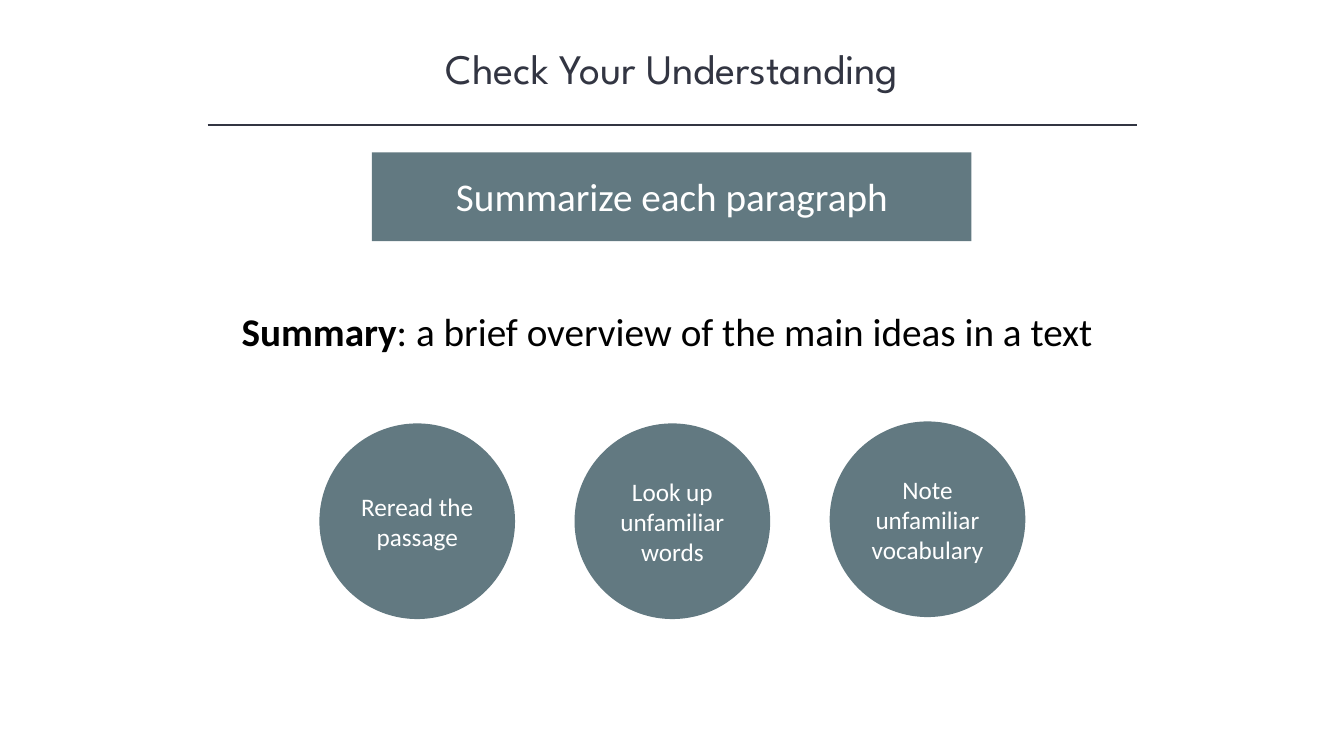
from lxml.etree import SubElement
from pptx import Presentation
from pptx.dml.color import RGBColor
from pptx.enum.shapes import MSO_CONNECTOR, MSO_SHAPE
from pptx.enum.text import MSO_ANCHOR, MSO_AUTO_SIZE, PP_ALIGN
from pptx.oxml.ns import qn
from pptx.util import Cm, Pt

INK = RGBColor(0x32, 0x35, 0x42)
SLATE = RGBColor(0x62, 0x79, 0x81)
WHITE = RGBColor(0xFF, 0xFF, 0xFF)
BLACK = RGBColor(0x00, 0x00, 0x00)

deck = Presentation()
deck.slide_width, deck.slide_height = Cm(33.87), Cm(19.05)
page = deck.slides.add_slide(deck.slide_layouts[6])


def write(box, spans, color, size, font="Calibri", align=PP_ALIGN.CENTER):
    """Fill the first paragraph with (text, bold) spans."""
    para = box.text_frame.paragraphs[0]
    para.alignment = align
    for text, bold in spans:
        span = para.add_run()
        span.text = text
        span.font.color.rgb = color
        for name, value in {"name": font, "size": Pt(size), "bold": bold}.items():
            setattr(span.font, name, value)


def add_slate_shape(kind, left, top, width, height):
    shape = page.shapes.add_shape(kind, Cm(left), Cm(top), Cm(width), Cm(height))
    shape.shadow.inherit = False
    shape.fill.solid()
    shape.fill.fore_color.rgb = SLATE
    shape.line.fill.background()
    return shape


# Title and the rule below it
title = page.shapes.add_textbox(Cm(4.24), Cm(0.94), Cm(25.4), Cm(1.55))
title.text_frame.word_wrap = True
title.text_frame.auto_size = MSO_AUTO_SIZE.SHAPE_TO_FIT_TEXT
write(title, [("Check Your Understanding", False)], INK, 30, "League Spartan")

rule = page.shapes.add_connector(
    MSO_CONNECTOR.STRAIGHT, Cm(5.23), Cm(3.15), Cm(28.65), Cm(3.15))
rule.line.color.rgb = INK
rule.line.width = Pt(1)
SubElement(rule._element.spPr, qn("a:effectLst"))

# Banner with its heading
add_slate_shape(MSO_SHAPE.RECTANGLE, 9.37, 3.84, 15.11, 2.24)
heading = page.shapes.add_textbox(Cm(9.6), Cm(4.22), Cm(14.66), Cm(1.45))
heading.text_frame.word_wrap = True
heading.text_frame.auto_size = MSO_AUTO_SIZE.SHAPE_TO_FIT_TEXT
write(heading, [("Summarize each paragraph", False)], WHITE, 28)

# Definition
definition = page.shapes.add_textbox(Cm(5.84), Cm(7.62), Cm(22.17), Cm(1.45))
definition.text_frame.word_wrap = False
definition.text_frame.auto_size = MSO_AUTO_SIZE.SHAPE_TO_FIT_TEXT
write(definition,
      [("Summary", True), (": a brief overview of the main ideas in a text", False)],
      BLACK, 28, align=PP_ALIGN.LEFT)

# Row of step circles
steps = [("Reread the passage", 10.67),
         ("Look up unfamiliar words", 10.67),
         ("Note unfamiliar vocabulary", 10.62)]
for index, (step, top) in enumerate(steps):
    circle = add_slate_shape(MSO_SHAPE.OVAL, 8.05 + index * 6.43, top, 4.93, 4.93)
    circle.text_frame.word_wrap = True
    circle.text_frame.vertical_anchor = MSO_ANCHOR.MIDDLE
    write(circle, [(step, False)], WHITE, 18)

deck.save("out.pptx")
